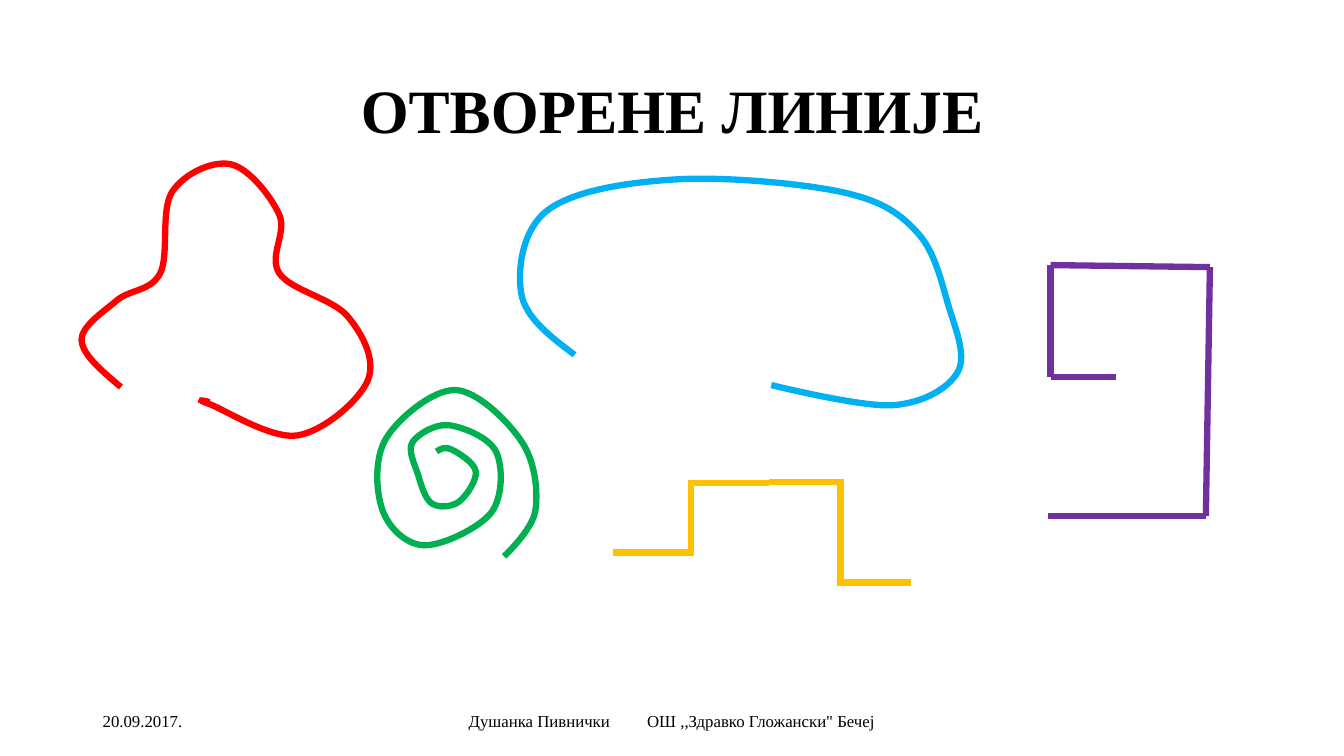
from itertools import pairwise

from lxml import etree
from pptx import Presentation, util as u
from pptx.dml.color import RGBColor
from pptx.enum import shapes, text
from pptx.oxml.ns import qn

PX = 9144  # 100 px to the inch
FONT = "Times New Roman"
COLORS = {"text": "000000", "red": "FF0000", "blue": "00B0F0",
          "green": "00B050", "purple": "7030A0", "yellow": "FFC000"}


def style_line(shape, color):
    """Give a thick line with sharp corners and no shadow."""
    shape.line.color.rgb = RGBColor.from_string(COLORS[color])
    shape.line.width = u.Pt(4.5)
    sp_pr = shape._element.spPr
    etree.SubElement(sp_pr.find(qn("a:ln")), qn("a:miter"), lim="800000")
    etree.SubElement(sp_pr, qn("a:effectLst"))


def smooth_path(anchors, end_pull):
    """Return two control points and an end point for each curve between anchors.

    The tangent at an inner anchor is parallel to the line between its neighbours.
    end_pull is how far the last control point leans from the end to the one before.
    """
    arrive, leave = [], []
    for (x0, y0), (x, y), (x1, y1) in zip(anchors, anchors[1:], anchors[2:]):
        dx, dy = (x1 - x0) / 6, (y1 - y0) / 6
        arrive.append((x - dx, y - dy))
        leave.append((x + dx, y + dy))
    first = [(a + b) / 2 for a, b in zip(anchors[0], arrive[0])]
    last = [a + end_pull * (b - a) for a, b in zip(anchors[-1], leave[-1])]
    curves = zip([first] + leave, arrive + [last], anchors[1:])
    return [point for curve in curves for point in curve]


prs = Presentation()
prs.slide_width, prs.slide_height = 1333 * PX, 750 * PX
s = prs.slides.add_slide(prs.slide_layouts[5])

# Title and footer
CENTER, LEFT = text.PP_ALIGN.CENTER, text.PP_ALIGN.LEFT
footer_top, footer_height = 695, 40
texts = [("ОТВОРЕНЕ ЛИНИЈЕ", 44, CENTER, (92, 40, 1150, 145))]
for words, left, width in [("20.09.2017.", 92, 300),
                           ("Душанка Пивнички", 455, 170),
                           ('ОШ ,,Здравко Гложански" Бечеј', 632, 270)]:
    texts.append((words, 12, LEFT, (left, footer_top, width, footer_height)))

for words, size, align, place in texts:
    is_title = align == CENTER
    box = s.shapes.title if is_title else s.shapes.add_textbox(0, 0, 0, 0)
    box.left, box.top, box.width, box.height = (v * PX for v in place)
    tf = box.text_frame
    tf.text = words
    tf.word_wrap = True
    tf.vertical_anchor = text.MSO_ANCHOR.MIDDLE
    p = tf.paragraphs[0]
    p.alignment = align
    if is_title:
        p.line_spacing = 0.9
    font = p.runs[0].font
    font.name, font.size, font.bold = FONT, u.Pt(size), is_title
    font.color.rgb = RGBColor.from_string(COLORS["text"])

# Smooth open lines, each drawn through a few anchors
pear = [(120, 384), (81, 338), (116, 298), (159, 271), (171, 190), (229, 163), (277, 213),
        (277, 271), (345, 314), (365, 377), (295, 432), (208, 401), (208, 399)]
arch = [(570, 352), (517, 291), (544, 208), (670, 178), (837, 191), (911, 232),
        (941, 304), (950, 369), (885, 402), (765, 382)]
inner_turn = [(433, 448), (448, 446), (472, 468), (455, 498), (429, 500), (415, 472)]
middle_turn = [(409, 439), (446, 422), (492, 448), (487, 509), (420, 541), (379, 505)]
outer_turn = [(383, 435), (452, 387), (518, 439), (531, 507), (500, 552)]
spiral = inner_turn + middle_turn + outer_turn

for color, anchors, end_pull in [("red", pear, 0.5), ("blue", arch, 0), ("green", spiral, 0)]:
    builder = s.shapes.build_freeform(*anchors[0], scale=PX)
    builder.add_line_segments(smooth_path(anchors, end_pull), close=False)
    sp = builder.convert_to_shape()
    sp.fill.background()
    style_line(sp, color)
    # Turn every three straight segments into one Bézier curve
    outline = sp._element.find(".//" + qn("a:path"))
    segments = outline.findall(qn("a:lnTo"))
    for i in range(0, len(segments), 3):
        bezier = etree.SubElement(outline, qn("a:cubicBezTo"))
        for segment in segments[i:i + 3]:
            bezier.append(segment[0])
            outline.remove(segment)

# Angular open lines: a square hook of straight sides, and two steps
left, right, top, bottom = 1042, 1200, 263, 512
hook_end, hook_y = 1107, 374
top_right, bottom_right = (right, top + 2), (right - 4, bottom)
hook = [(hook_end, hook_y), (left, hook_y), (left, top),
        top_right, bottom_right, (left - 3, bottom)]
steps = [((608, 548), (763, 479)), ((763, 478), (904, 578))]

STRAIGHT, ELBOW = shapes.MSO_CONNECTOR.STRAIGHT, shapes.MSO_CONNECTOR.ELBOW
for kind, color, lines in [(STRAIGHT, "purple", pairwise(hook)), (ELBOW, "yellow", steps)]:
    for start, end in lines:
        c = s.shapes.add_connector(kind, *(v * PX for v in start + end))
        style_line(c, color)

prs.save("out.pptx")
